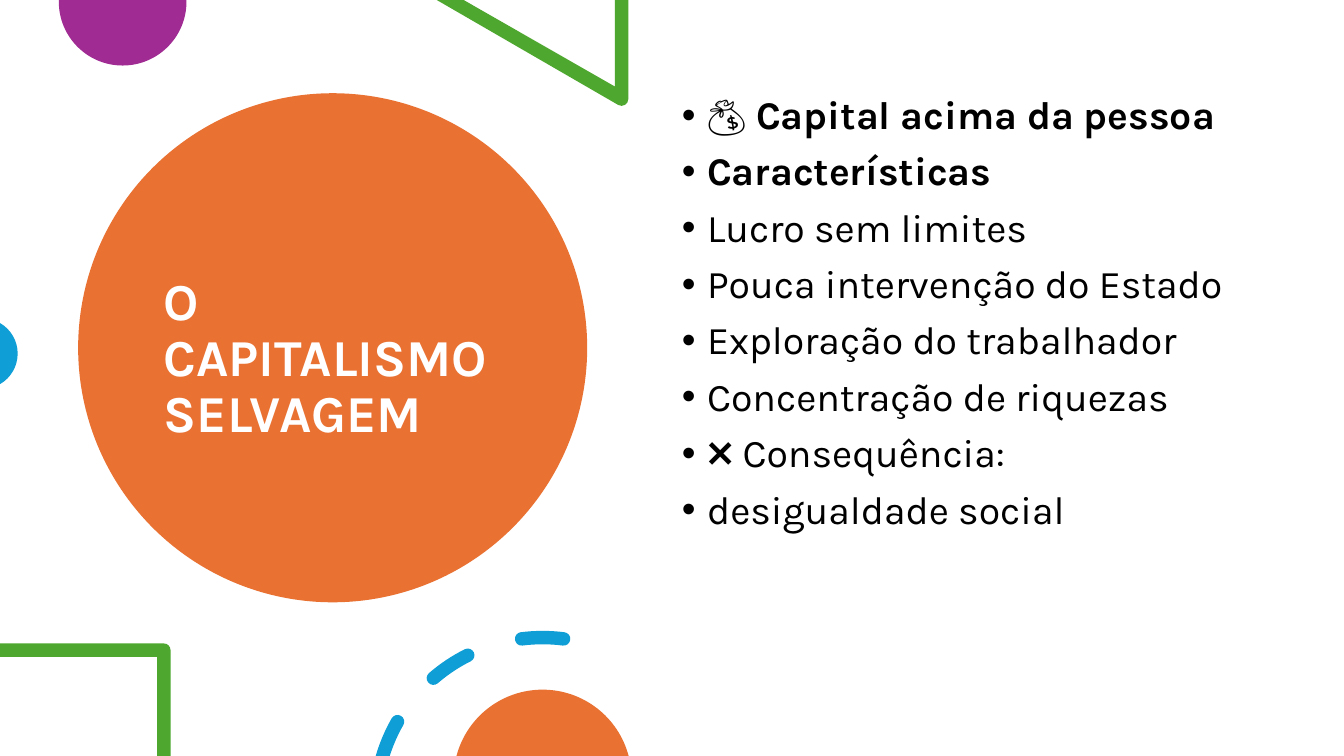
import math

import pptx
import pptx.dml.color
import pptx.enum.shapes
import pptx.enum.text
import pptx.oxml.ns
import pptx.util
from lxml import etree

COLS, ROWS = 16, 9
UNIT = pptx.util.Inches(7.5) / ROWS
FONT = "Karla"
WHITE = pptx.dml.color.RGBColor(0xFF, 0xFF, 0xFF)
BLACK = pptx.dml.color.RGBColor(0x00, 0x00, 0x00)
ORANGE = pptx.dml.color.RGBColor(0xE9, 0x71, 0x32)
PURPLE = pptx.dml.color.RGBColor(0xA0, 0x2B, 0x93)
GREEN = pptx.dml.color.RGBColor(0x4E, 0xA7, 0x2E)
BLUE = pptx.dml.color.RGBColor(0x0F, 0x9E, 0xD5)

TITLE = "O CAPITALISMO SELVAGEM"
BULLETS = [
    ("💰 Capital acima da pessoa", True),
    ("Características", True),
    ("Lucro sem limites", False),
    ("Pouca intervenção do Estado", False),
    ("Exploração do trabalhador", False),
    ("Concentração de riquezas", False),
    ("❌ Consequência:", False),
    ("desigualdade social", False),
]


def grid(*values):
    return [pptx.util.Emu(round(v * UNIT)) for v in values]


def arc(cx, cy, radius, start, end):
    def place(angle, along=0):
        a = math.radians(angle)
        x = cx + radius * (math.sin(a) + along * math.cos(a))
        return x, cy - radius * (math.cos(a) - along * math.sin(a))

    pieces = math.ceil(abs(end - start) / 90)
    step = (end - start) / pieces
    reach = 4 / 3 * math.tan(math.radians(step) / 4)
    parts = [place(start)]
    for i in range(pieces):
        a, b = start + i * step, start + (i + 1) * step
        parts.append(place(a, reach) + place(b, -reach) + place(b))
    return parts


def dash(cx, cy, radius, half, start, end):
    def cap(angle, turn):
        a = math.radians(angle)
        x, y = cx + radius * math.sin(a), cy - radius * math.cos(a)
        return arc(x, y, half, angle + turn, angle + turn + 180)[1:]

    def limit(r):
        return max(start, -math.degrees(math.acos((cy - ROWS) / r)))

    outer, inner = radius + half, radius - half
    parts = arc(cx, cy, outer, limit(outer), end) + cap(end, 0)
    parts += arc(cx, cy, inner, end, limit(inner))[1:]
    clipped = cy - radius * math.cos(math.radians(start)) >= ROWS
    return parts if clipped else parts + cap(start, 180)


def paint(sp, color):
    sp.shadow.inherit = False
    sp.fill.solid()
    sp.fill.fore_color.rgb = color
    sp.line.fill.background()
    return sp


def curve_segments(sp, parts):
    lines = sp._element.iter(pptx.oxml.ns.qn("a:lnTo"))
    lines = iter(list(lines))
    for part in parts:
        first = next(lines)
        if len(part) == 6:
            curve = etree.Element(pptx.oxml.ns.qn("a:cubicBezTo"))
            first.addprevious(curve)
            for line in (first, next(lines), next(lines)):
                curve.append(line[0])
                line.getparent().remove(line)


def add_outline(slide, color, *contours):
    builder = None
    for start, *parts in contours:
        if builder is None:
            builder = slide.shapes.build_freeform(*grid(*start))
        else:
            builder.move_to(*grid(*start))
        points = [grid(*part[i:i + 2]) for part in parts for i in range(0, len(part), 2)]
        builder.add_line_segments(points, close=True)
    sp = paint(builder.convert_to_shape(), color)
    curve_segments(sp, [part for contour in contours for part in contour[1:]])


def add_run(p, text, size, color, bold):
    r = p.add_run()
    r.text = text
    r.font.name = FONT
    r.font.size = pptx.util.Pt(size)
    r.font.bold = bold
    r.font.color.rgb = color


def add_title(slide, left, top, width, height):
    sp = slide.shapes.title
    sp.left, sp.top, sp.width, sp.height = grid(left, top, width, height)
    tf = sp.text_frame
    tf.word_wrap = True
    tf.auto_size = pptx.enum.text.MSO_AUTO_SIZE.NONE
    tf.vertical_anchor = pptx.enum.text.MSO_ANCHOR.MIDDLE
    p = tf.paragraphs[0]
    p.alignment = pptx.enum.text.PP_ALIGN.LEFT
    p.line_spacing = 0.9
    add_run(p, TITLE, 37, WHITE, True)
    return sp


def add_bullet(p):
    pPr = p._p.get_or_add_pPr()
    indent = pptx.util.Inches(0.25)
    pPr.set("marL", str(indent))
    pPr.set("indent", str(-indent))
    etree.SubElement(pPr, pptx.oxml.ns.qn("a:buFont")).set("typeface", "Arial")
    etree.SubElement(pPr, pptx.oxml.ns.qn("a:buChar")).set("char", "•")


def add_bullets(slide, left, top, width, height):
    tf = slide.shapes.add_textbox(*grid(left, top, width, height)).text_frame
    tf.word_wrap = True
    for i, (text, bold) in enumerate(BULLETS):
        p = tf.add_paragraph() if i else tf.paragraphs[0]
        add_bullet(p)
        p.line_spacing = 0.9
        p.space_before = pptx.util.Pt(10 if i else 0)
        add_run(p, text, 28, BLACK, bold)


def main():
    prs = pptx.Presentation()
    prs.slide_width, prs.slide_height = grid(COLS, ROWS)
    slide = prs.slides.add_slide(prs.slide_layouts[5])

    oval = pptx.enum.shapes.MSO_SHAPE.OVAL
    disc = paint(slide.shapes.add_shape(oval, *grid(0.93, 1.11, 6.06, 6.06)), ORANGE)
    title = add_title(slide, 1.83, 1.61, 4.25, 5.34)
    title._element.addprevious(disc._element)

    add_outline(slide, PURPLE, [(0.7, 0), (2.22, 0)] + arc(1.46, 0.02, 0.76, 90, 270))
    triangle = [(7.48, 0), (7.32, 0), (7.32, 1.03), (5.52, 0), (5.2, 0)]
    add_outline(slide, GREEN, triangle + arc(7.4, 1.18, 0.08, 210, 90))
    add_outline(slide, BLUE, arc(-0.21, 4.21, 0.42, 30, 150))
    add_bullets(slide, 8, 1.08, 6.9, 6.42)
    corner = [(2.03, ROWS), (1.87, ROWS), (1.87, 7.82), (0, 7.82), (0, 7.66)]
    add_outline(slide, GREEN, corner + arc(1.95, 7.74, 0.08, 0, 90))
    spans = [(-74, -60.2), (-40.8, -26.6), (-7.2, 7.2)]
    add_outline(slide, BLUE, *[dash(6.46, 9.58, 1.99, 0.08, *span) for span in spans])
    add_outline(slide, ORANGE, arc(6.46, 9.27, 1.06, -75.2, 75.2))

    prs.save("out.pptx")


if __name__ == "__main__":
    main()
